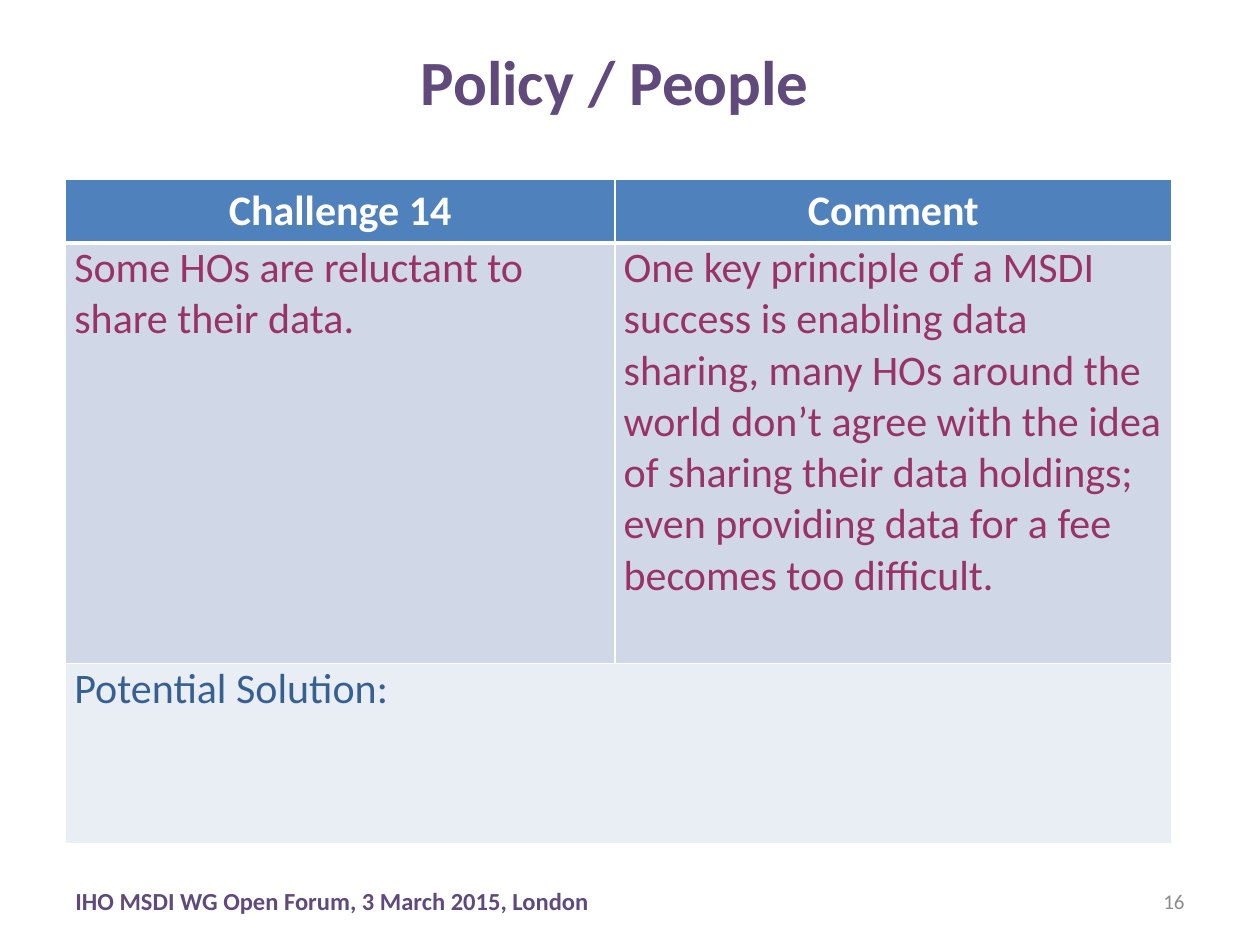
from lxml import etree
from pptx import Presentation
from pptx import util as u
from pptx.dml.color import RGBColor
from pptx.enum import text
from pptx.oxml.ns import qn

FONT = "Calibri"
COLOURS = {
    "purple": "604A7B",
    "grey": "8C8C8C",
    "white": "FFFFFF",
    "header": "4F81BD",
    "body": "D0D8E8",
    "solution": "E9EDF4",
    "plum": "993366",
    "blue": "376092",
}


def rgb(name):
    return RGBColor.from_string(COLOURS[name])


def write(frame, words, size, colour, bold=False, align=text.PP_ALIGN.LEFT):
    frame.word_wrap = True
    paragraph = frame.paragraphs[0]
    paragraph.alignment = align
    run = paragraph.add_run()
    run.text = words
    run.font.name = FONT
    run.font.size = u.Pt(size)
    run.font.bold = bold
    run.font.color.rgb = rgb(colour)


def add_title(slide, box, words):
    title = slide.shapes.title
    title.left, title.top, title.width, title.height = map(u.Inches, box)
    title.text_frame.vertical_anchor = text.MSO_ANCHOR.MIDDLE
    write(title.text_frame, words, 36, "purple", True, text.PP_ALIGN.CENTER)


def add_footer(slide, box, note, number):
    left, top, width, height = box
    number_width = 2.33
    parts = [
        (left, 6.08, note, 14, "purple", True, text.PP_ALIGN.LEFT),
        (left + width - number_width, number_width, number, 12, "grey", False,
         text.PP_ALIGN.RIGHT),
    ]
    for part_left, part_width, *style in parts:
        shape = slide.shapes.add_textbox(
            u.Inches(part_left), u.Inches(top), u.Inches(part_width), u.Inches(height))
        shape.text_frame.vertical_anchor = text.MSO_ANCHOR.MIDDLE
        write(shape.text_frame, *style)


def set_borders(cell, bottom_width):
    properties = cell._tc.get_or_add_tcPr()
    widths = {"a:lnL": 1, "a:lnR": 1, "a:lnT": 1, "a:lnB": bottom_width}
    for index, (tag, width) in enumerate(widths.items()):
        line = etree.Element(qn(tag), w=str(u.Pt(width)))
        fill = etree.SubElement(line, qn("a:solidFill"))
        etree.SubElement(fill, qn("a:srgbClr"), val=COLOURS["white"])
        properties.insert(index, line)


def add_challenge_table(slide, box, challenge, comment, solution):
    column_widths = [4.36, 4.42]
    row_heights = [0.5, 3.34, 1.43]
    fills = ["header", "body", "solution"]
    text_colours = ["white", "plum", "blue"]
    rows = [[challenge[0], comment[0]], [challenge[1], comment[1]], [solution, ""]]

    table = slide.shapes.add_table(3, 2, *map(u.Inches, box)).table
    for column, width in zip(table.columns, column_widths):
        column.width = u.Inches(width)
    for index, height in enumerate(row_heights):
        table.rows[index].height = u.Inches(height)
        header = index == 0
        for cell, words in zip(table.rows[index].cells, rows[index]):
            cell.fill.solid()
            cell.fill.fore_color.rgb = rgb(fills[index])
            set_borders(cell, 3 if header else 1)
            if not header:
                cell.margin_left = cell.margin_right = u.Inches(0.07)
                cell.margin_top = cell.margin_bottom = 0
            if words:
                align = text.PP_ALIGN.CENTER if header else text.PP_ALIGN.LEFT
                write(cell.text_frame, words, 24, text_colours[index], header, align)
    table.cell(2, 0).merge(table.cell(2, 1))


def main():
    presentation = Presentation()
    presentation.slide_width = u.Inches(10)
    presentation.slide_height = u.Inches(7.5)
    slide = presentation.slides.add_slide(presentation.slide_layouts[5])

    add_title(slide, (2.53, 0.09, 4.7, 1.09), "Policy / People")
    add_challenge_table(
        slide, (0.52, 1.42, 8.78, 5.27),
        ("Challenge 14", "Some HOs are reluctant to share their data."),
        ("Comment",
         "One key principle of a MSDI success is enabling data sharing, many HOs "
         "around the world don’t agree with the idea of sharing their data holdings; "
         "even providing data for a fee becomes too difficult."),
        "Potential Solution:")
    add_footer(slide, (0.5, 6.95, 9, 0.4),
               "IHO MSDI WG Open Forum, 3 March 2015, London", "16")
    presentation.save("out.pptx")


if __name__ == "__main__":
    main()
